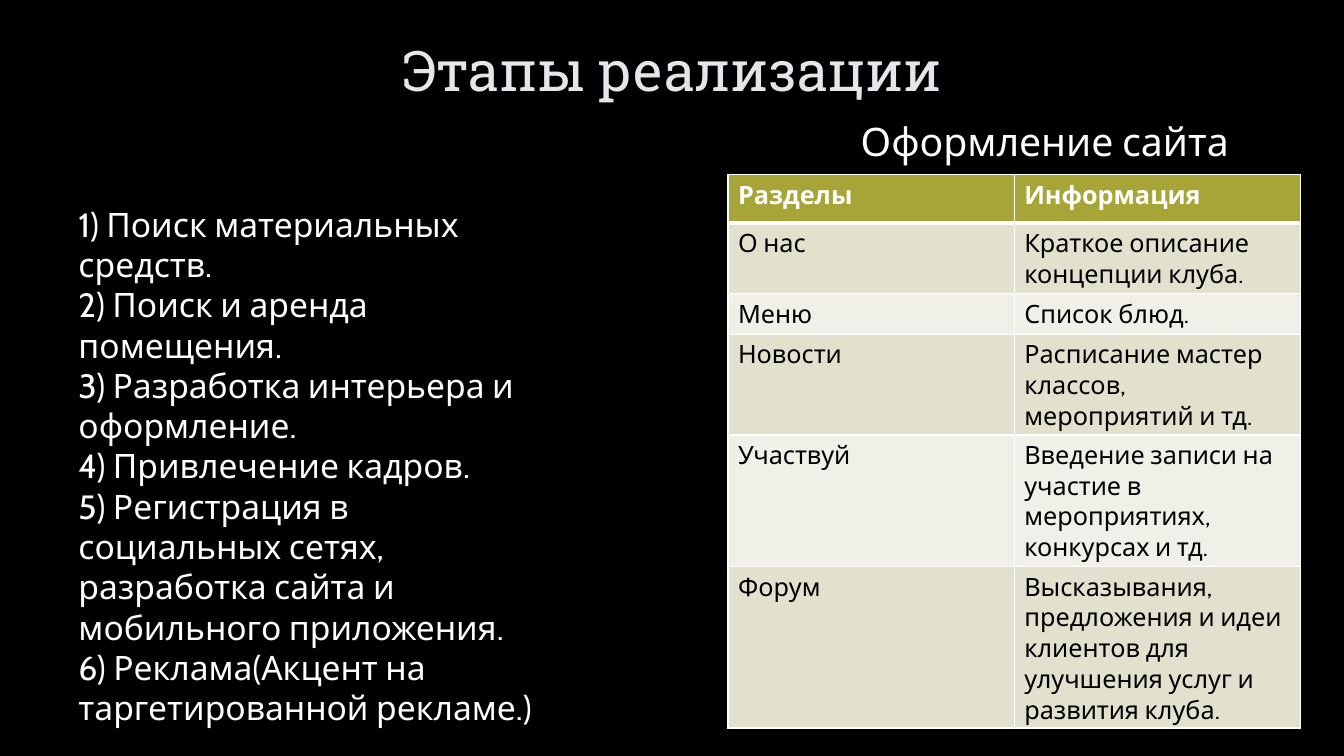
"""Build the project stages slide with a table of website sections."""
from lxml import etree
from pptx import Presentation
from pptx import util as u
from pptx.dml.color import RGBColor
from pptx.enum import text
from pptx.oxml import ns


def paint(target, color):
    target.solid()
    target.fore_color.rgb = RGBColor.from_string(color)


def write(frame, content, size, color, font="Cabin", bold=False):
    frame.text = content
    frame.word_wrap = True
    for paragraph in frame.paragraphs:
        for run in paragraph.runs:
            run.font.name = font
            run.font.size = u.Pt(size)
            run.font.bold = bold
            paint(run.font.fill, color)


presentation = Presentation()
presentation.slide_width = u.Pt(960)
presentation.slide_height = u.Pt(540)
slide = presentation.slides.add_slide(presentation.slide_layouts[6])
paint(slide.background.fill, "000000")

title = slide.shapes.add_textbox(u.Pt(72.7), u.Pt(0), u.Pt(815), u.Pt(99.4)).text_frame
write(title, "Этапы реализации", 40, "E5E5EA", "Roboto Slab")
title.vertical_anchor = text.MSO_ANCHOR.MIDDLE
title.paragraphs[0].alignment = text.PP_ALIGN.CENTER

stages = [
    "1) Поиск материальных средств.",
    "2) Поиск и аренда помещения.",
    "3) Разработка интерьера и оформление.",
    "4) Привлечение кадров.",
    "5) Регистрация в социальных сетях, разработка сайта и мобильного приложения.",
    "6) Реклама(Акцент на таргетированной рекламе.)",
]
stage_list = slide.shapes.add_textbox(u.Pt(49), u.Pt(141.8), u.Pt(357), u.Pt(298))
write(stage_list.text_frame, "\n".join(stages), 24, "FFFFFF")

caption = slide.shapes.add_textbox(u.Pt(607.7), u.Pt(80), u.Pt(296.6), u.Pt(41))
write(caption.text_frame, "Оформление сайта", 28, "FFFFFF")

sections = [
    ("Разделы", "Информация", 34.5),
    ("О нас", "Краткое описание концепции клуба.", 50),
    ("Меню", "Список блюд.", 29),
    ("Новости", "Расписание мастер классов, мероприятий и тд.", 72),
    ("Участвуй", "Введение записи на участие в мероприятиях, конкурсах и тд.", 94),
    ("Форум", "Высказывания, предложения и идеи клиентов для улучшения услуг и развития клуба.", 115),
]
table = slide.shapes.add_table(
    len(sections), 2, u.Pt(520), u.Pt(124.8), u.Pt(409), u.Pt(394.5)
).table

for row_index, (section, information, height) in enumerate(sections):
    table.rows[row_index].height = u.Pt(height)
    header = row_index == 0
    fill = "A7A537" if header else ("F1F0E8", "E1E1CE")[row_index % 2]
    for column, content in enumerate((section, information)):
        cell = table.cell(row_index, column)
        write(cell.text_frame, content, 18, "FFFFFF" if header else "000000", bold=header)
        paint(cell.fill, fill)
        properties = cell._tc.get_or_add_tcPr()
        for position, side in enumerate(("lnL", "lnR", "lnT", "lnB")):
            heavy = (row_index, side) in ((0, "lnB"), (1, "lnT"))
            border = etree.Element(ns.qn(f"a:{side}"), w=str(u.Pt(3 if heavy else 1)))
            border_fill = etree.SubElement(border, ns.qn("a:solidFill"))
            etree.SubElement(border_fill, ns.qn("a:srgbClr"), val="FFFFFF")
            properties.insert(position, border)

presentation.save("out.pptx")
